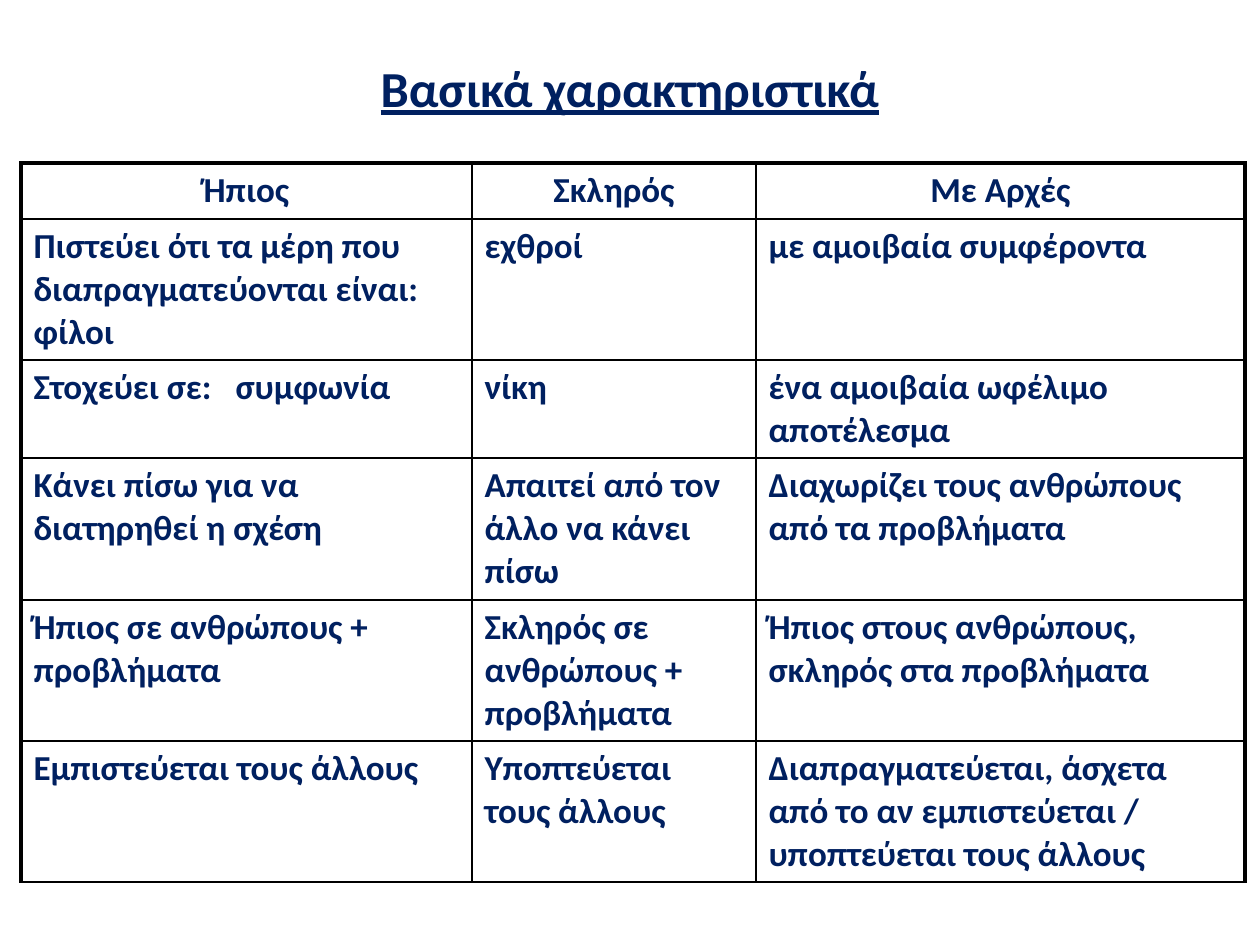
from pptx import Presentation
from pptx.dml.color import RGBColor
from pptx.enum.text import MSO_ANCHOR, PP_ALIGN
from pptx.oxml.ns import qn
from pptx.util import Pt
from lxml.etree import SubElement

SCALE = 914400 / 126
NAVY = RGBColor(0x00, 0x20, 0x60)
BLACK = RGBColor(0x00, 0x00, 0x00)
THIN, THICK = 1, 2.25

WIDTHS = [451, 284, 489]
HEIGHTS = [56, 141, 98, 142, 141, 141]
ROWS = [
    ["Ήπιος", "Σκληρός", "Με Αρχές"],
    ["Πιστεύει ότι τα μέρη που διαπραγματεύονται είναι: φίλοι",
     "εχθροί", "με αμοιβαία συμφέροντα"],
    ["Στοχεύει σε:\tσυμφωνία", "νίκη", "ένα αμοιβαία ωφέλιμο αποτέλεσμα"],
    ["Κάνει πίσω για να διατηρηθεί η σχέση",
     "Απαιτεί από τον άλλο να κάνει πίσω",
     "Διαχωρίζει τους ανθρώπους από τα προβλήματα"],
    ["Ήπιος σε ανθρώπους + προβλήματα",
     "Σκληρός σε ανθρώπους + προβλήματα",
     "Ήπιος στους ανθρώπους, σκληρός στα προβλήματα"],
    ["Εμπιστεύεται τους άλλους", "Υποπτεύεται τους άλλους",
     "Διαπραγματεύεται, άσχετα από το αν εμπιστεύεται / "
     "υποπτεύεται τους άλλους"],
]


def px(n):
    return round(n * SCALE)


class Deck:
    font = "Calibri"
    color = NAVY
    tab = 202

    def __init__(self, wide, high):
        self.prs = Presentation()
        self.prs.slide_width, self.prs.slide_height = px(wide), px(high)
        self.slide = self.prs.slides.add_slide(self.prs.slide_layouts[6])

    def label(self, para, text, size, align, under=None):
        para.alignment = align
        run = para.add_run()
        run.text = text
        font = run.font
        font.name, font.size, font.bold = self.font, Pt(size), True
        font.underline = under
        font.color.rgb = self.color
        if "\t" in text:
            tabs = SubElement(para._p.get_or_add_pPr(), qn("a:tabLst"))
            SubElement(tabs, qn("a:tab"), pos=str(px(self.tab)), algn="l")

    def title(self, text, x, y, w, h):
        box = self.slide.shapes.add_textbox(px(x), px(y), px(w), px(h))
        frame = box.text_frame
        frame.word_wrap = True
        frame.vertical_anchor = MSO_ANCHOR.MIDDLE
        self.label(frame.paragraphs[0], text, 28.8, PP_ALIGN.CENTER, True)

    def border(self, cell, sides):
        props = cell._tc.get_or_add_tcPr()
        for side, width in sides.items():
            line = SubElement(props, qn("a:ln" + side), w=str(Pt(width)))
            fill = SubElement(line, qn("a:solidFill"))
            SubElement(fill, qn("a:srgbClr"), val=str(BLACK))

    def table(self, rows, x, y, widths, heights):
        frame = self.slide.shapes.add_table(
            len(rows), len(widths), px(x), px(y),
            px(sum(widths)), px(sum(heights)))
        table = frame.table
        table.first_row = table.horz_banding = False
        for col, width in zip(table.columns, widths):
            col.width = px(width)
        for row, height in zip(table.rows, heights):
            row.height = px(height)
        last = len(widths) - 1
        for i, row in enumerate(rows):
            for j, text in enumerate(row):
                cell = table.cell(i, j)
                align = PP_ALIGN.LEFT if i else PP_ALIGN.CENTER
                self.label(cell.text_frame.paragraphs[0], text, 20, align)
                self.border(cell, {
                    "L": THIN if j else THICK,
                    "R": THICK if j == last else THIN,
                    "T": THIN if i else THICK,
                    "B": THIN,
                })
                cell.fill.background()

    def save(self):
        self.prs.save("out.pptx")


def main():
    deck = Deck(1260, 945)
    deck.title("Βασικά χαρακτηριστικά", 63, 54, 1134, 67)
    deck.table(ROWS, 21, 163, WIDTHS, HEIGHTS)
    deck.save()


if __name__ == "__main__":
    main()
